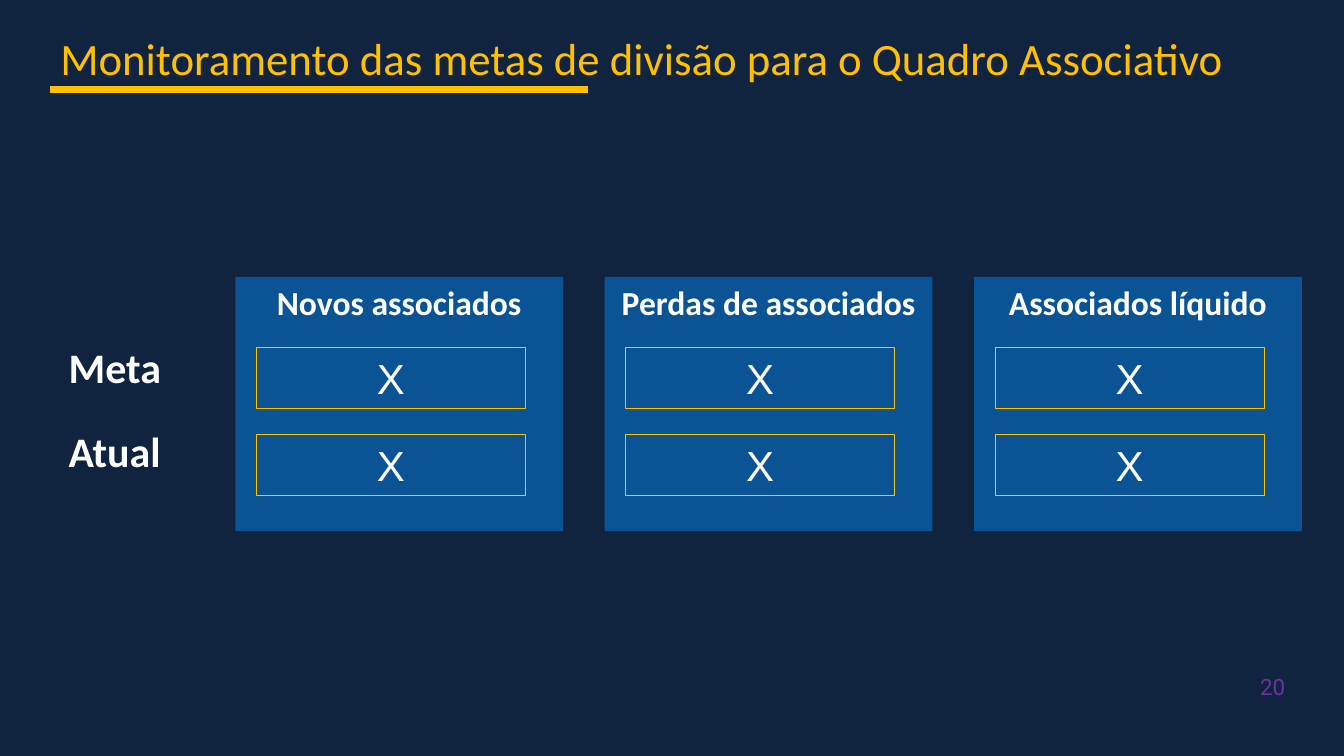
from lxml import etree
from pptx import Presentation
from pptx.dml.color import RGBColor
from pptx.enum.shapes import MSO_CONNECTOR, MSO_SHAPE
from pptx.enum.text import MSO_ANCHOR, PP_ALIGN
from pptx.oxml.ns import qn
from pptx.util import Cm, Pt

RECTANGLE = MSO_SHAPE.RECTANGLE
STRAIGHT = MSO_CONNECTOR.STRAIGHT
TOP, MIDDLE = MSO_ANCHOR.TOP, MSO_ANCHOR.MIDDLE
LEFT, CENTER, RIGHT = PP_ALIGN.LEFT, PP_ALIGN.CENTER, PP_ALIGN.RIGHT

NAVY, BLUE, GOLD = "10233F", "0A5496", "FFC000"
WHITE, PURPLE = "FFFFFF", "7030A0"

CARD_TITLES = ["Novos associados", "Perdas de associados", "Associados líquido"]
ROW_LABELS = ["Meta", "Atual"]
CARD_LEFT, CARD_TOP, CARD_STEP = 5.93, 6.98, 9.31
LABEL_TOP, LABEL_STEP = 8.48, 2.11
VALUE_TOP, VALUE_STEP = 8.75, 2.19


def color(hex_code):
    return RGBColor.from_string(hex_code)


def write(shape, text, size, hex_code=WHITE, font="Calibri", bold=False,
          align=LEFT, anchor=TOP):
    frame = shape.text_frame
    frame.word_wrap = True
    frame.vertical_anchor = anchor
    frame.text = text
    para = frame.paragraphs[0]
    para.alignment = align
    style = para.runs[0].font
    style.name, style.size, style.bold = font, Pt(size), bold
    style.color.rgb = color(hex_code)


def add_text(page, left, top, width, height, text, size, **style):
    box = page.shapes.add_textbox(Cm(left), Cm(top), Cm(width), Cm(height))
    write(box, text, size, **style)
    return box


def add_box(group, left, top, width, height, fill=None, outline=None):
    """Add a rectangle; without a fill or outline colour that part is clear."""
    box = group.shapes.add_shape(RECTANGLE, Cm(left), Cm(top), Cm(width), Cm(height))
    box.shadow.inherit = False
    if fill:
        box.fill.solid()
        box.fill.fore_color.rgb = color(fill)
    else:
        box.fill.background()
    if outline:
        box.line.color.rgb = color(outline)
        box.line.width = Pt(0.75)
    else:
        box.line.fill.background()
    return box


def add_rule(page, left, right, top):
    rule = page.shapes.add_connector(STRAIGHT, Cm(left), Cm(top), Cm(right), Cm(top))
    rule.line.color.rgb = color(GOLD)
    rule.line.width = Pt(4.5)
    etree.SubElement(rule._element.spPr, qn("a:effectLst"))


def add_card(page, left, title):
    """Add a titled card with one value box for each row label."""
    group = page.shapes.add_group_shape()
    card = add_box(group, left, CARD_TOP, 8.26, 6.4, fill=BLUE)
    write(card, title, 24, bold=True, align=CENTER)
    for row in range(len(ROW_LABELS)):
        value = add_box(group, left + 0.53, VALUE_TOP + row * VALUE_STEP,
                        6.78, 1.54, outline=GOLD)
        write(value, "X", 30, font="Arial", align=CENTER)


def add_page_number(page, number):
    box = add_text(page, 30.84, 16.84, 1.55, 0.94, number, 16, hex_code=PURPLE,
                   font="Roboto", align=RIGHT, anchor=MIDDLE)
    box.text_frame.margin_left = box.text_frame.margin_right = Cm(0)


def main():
    deck = Presentation()
    deck.slide_width, deck.slide_height = Cm(33.87), Cm(19.05)
    page = deck.slides.add_slide(deck.slide_layouts[6])
    page.background.fill.solid()
    page.background.fill.fore_color.rgb = color(NAVY)

    add_page_number(page, "20")
    add_text(page, 1.27, 0.64, 30.05, 1.62,
             "Monitoramento das metas de divisão para o Quadro Associativo",
             32, hex_code=GOLD)
    add_rule(page, 1.27, 14.82, 2.26)
    for row, label in enumerate(ROW_LABELS):
        add_text(page, 1.48, LABEL_TOP + row * LABEL_STEP, 4.45, 1.54,
                 label, 30, bold=True)
    for column, title in enumerate(CARD_TITLES):
        add_card(page, CARD_LEFT + column * CARD_STEP, title)

    deck.save("out.pptx")


if __name__ == "__main__":
    main()
